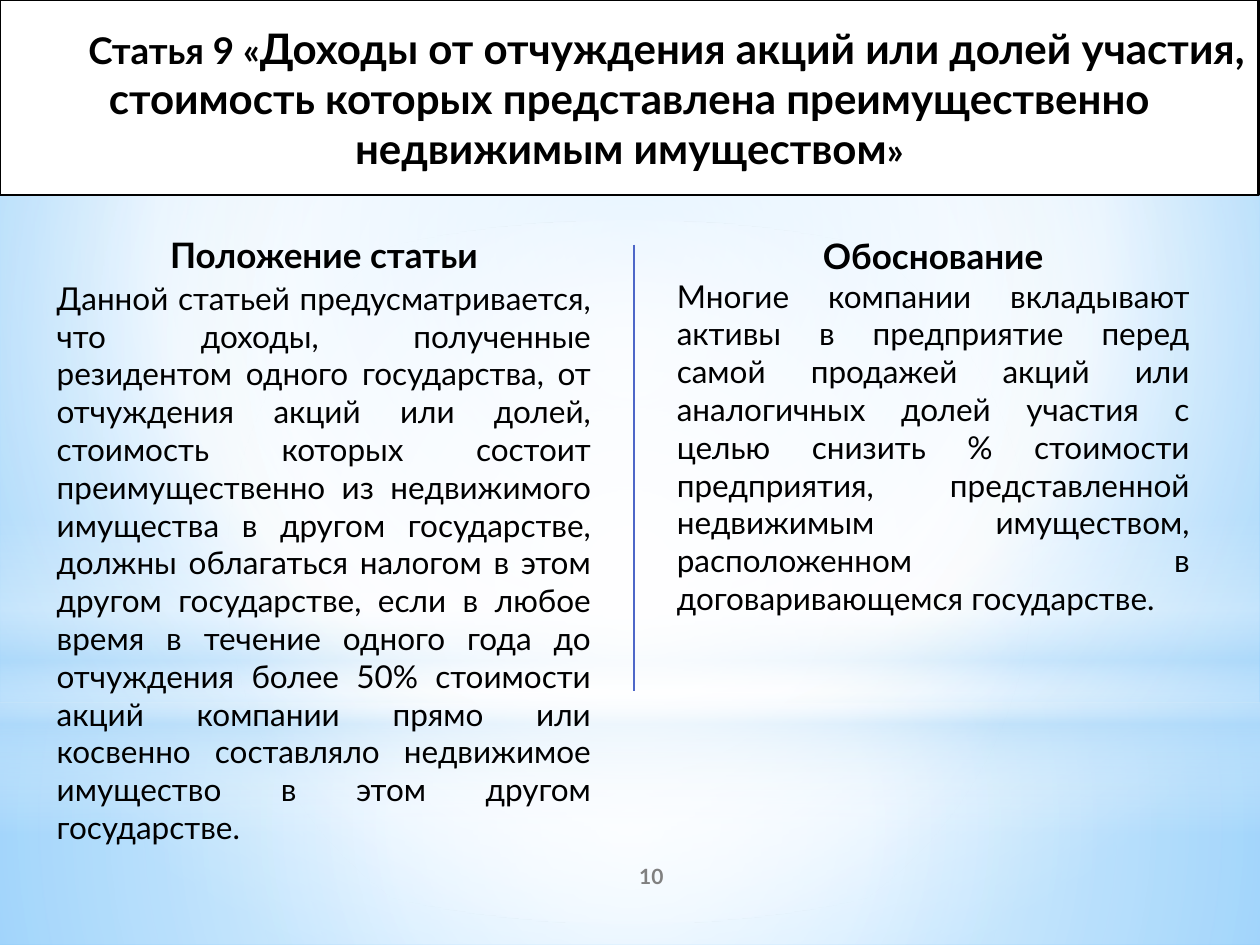
from lxml import etree
from pptx import Presentation
from pptx import util as u
from pptx.dml.color import RGBColor
from pptx.enum import shapes, text
from pptx.oxml.ns import qn

BLACK = RGBColor(0x00, 0x00, 0x00)
WHITE = RGBColor(0xFF, 0xFF, 0xFF)
GREY = RGBColor(0x80, 0x80, 0x80)
SKY = RGBColor(0xB4, 0xDC, 0xFA)
LIGHT_BLUE = RGBColor(0x9E, 0xD5, 0xFF)
BRIGHT_BLUE = RGBColor(0x5B, 0xB9, 0xFF)
INDIGO = RGBColor(0x4E, 0x67, 0xC8)
FONT = "Lato"
CENTER = (50, 50, 50, 50)


def paint_gradient(fill, element, stops, focus=None):
    """Stops are (position %, colour, opacity %); without a focus it runs downwards."""
    fill.gradient()
    gradient = element.find(".//" + qn("a:gradFill"))
    for child in list(gradient):
        gradient.remove(child)
    stop_list = etree.SubElement(gradient, qn("a:gsLst"))
    for position, color, opacity in stops:
        stop = etree.SubElement(stop_list, qn("a:gs"), pos=str(position * 1000))
        rgb = etree.SubElement(stop, qn("a:srgbClr"), val=str(color))
        if opacity < 100:
            etree.SubElement(rgb, qn("a:alpha"), val=str(opacity * 1000))
    if focus:
        circle = etree.SubElement(gradient, qn("a:path"), path="circle")
        sides = {side: str(value * 1000) for side, value in zip("ltrb", focus)}
        etree.SubElement(circle, qn("a:fillToRect"), **sides)
    else:
        etree.SubElement(gradient, qn("a:lin"), ang="5400000", scaled="0")


def place(shape, left, top, width, height):
    """Position in centimetres."""
    shape.left, shape.top = u.Cm(left), u.Cm(top)
    shape.width, shape.height = u.Cm(width), u.Cm(height)


presentation = Presentation()
presentation.slide_width, presentation.slide_height = u.Cm(25.4), u.Cm(19.05)
slide = presentation.slides.add_slide(presentation.slide_layouts.get_by_name("Two Content"))

# Background with four soft layers of light
paint_gradient(
    slide.background.fill, slide.element,
    [(0, LIGHT_BLUE, 100), (60, WHITE, 100), (100, BRIGHT_BLUE, 100)], (20, 10, 20, 60),
)
RECTANGLE, OVAL = shapes.MSO_SHAPE.RECTANGLE, shapes.MSO_SHAPE.OVAL
layers = [
    (RECTANGLE, 14.17, 4.88, [(0, WHITE, 91), (37, WHITE, 76), (100, SKY, 79)], CENTER),
    (RECTANGLE, 0, 14.17, [(0, WHITE, 89), (48, WHITE, 62), (100, SKY, 79)], CENTER),
    (RECTANGLE, 10.46, 6.35, [(0, WHITE, 0), (29, WHITE, 30), (45, SKY, 40),
                              (55, WHITE, 26), (65, SKY, 60), (100, WHITE, 0)], None),
    (OVAL, 4.45, 14.17, [(0, WHITE, 100), (56, WHITE, 0)], CENTER),
]
title = slide.shapes.title
for kind, top, height, stops, focus in layers:
    layer = slide.shapes.add_shape(kind, 0, u.Cm(top), presentation.slide_width, u.Cm(height))
    layer.shadow.inherit = False
    layer.line.fill.background()
    paint_gradient(layer.fill, layer.element, stops, focus)
    title.element.addprevious(layer.element)

# Title
place(title, 0, 0, 25.37, 3.94)
title.fill.solid()
title.fill.fore_color.rgb = WHITE
title.line.color.rgb = BLACK
title.line.width = u.Pt(1.25)
frame = title.text_frame
frame.word_wrap = True
frame.auto_size = text.MSO_AUTO_SIZE.NONE
frame.vertical_anchor = text.MSO_ANCHOR.MIDDLE
paragraph = frame.paragraphs[0]
paragraph.alignment = text.PP_ALIGN.CENTER
paragraph._p.get_or_add_pPr().set("indent", str(u.Cm(1.5)))
for words, size in [
    ("Статья 9 «", 21),
    ("Доходы от отчуждения акций или долей участия, стоимость которых представлена "
     "преимущественно недвижимым имуществом", 24),
    ("»", 21),
]:
    run = paragraph.add_run()
    run.text = words
    run.font.name, run.font.size, run.font.bold = FONT, u.Pt(size), True
    run.font.color.rgb = BLACK

# Two columns
columns = [
    (1, (0.89, 4.6, 11.28, 12.55), text.MSO_ANCHOR.MIDDLE, 2, "Положение статьи",
     "Данной статьей предусматривается, что доходы, полученные резидентом одного "
     "государства, от отчуждения акций или долей, стоимость которых состоит "
     "преимущественно из недвижимого имущества в другом государстве, должны облагаться "
     "налогом в этом другом государстве, если в любое время в течение одного года до "
     "отчуждения более 50% стоимости акций компании прямо или косвенно составляло "
     "недвижимое имущество в этом другом государстве."),
    (2, (13.39, 4.6, 10.85, 8.03), text.MSO_ANCHOR.TOP, 0, "Обоснование",
     "Многие компании вкладывают активы в предприятие перед самой продажей акций или "
     "аналогичных долей участия с целью снизить % стоимости предприятия, представленной "
     "недвижимым имуществом, расположенном в договаривающемся государстве."),
]
for index, box, anchor, space, heading, body in columns:
    column = slide.placeholders[index]
    place(column, *box)
    frame = column.text_frame
    frame.word_wrap = True
    frame.auto_size = text.MSO_AUTO_SIZE.NONE
    frame.vertical_anchor = anchor
    frame.text = heading
    frame.add_paragraph().text = body
    styles = [(text.PP_ALIGN.CENTER, 20, True), (text.PP_ALIGN.JUSTIFY, 18, False)]
    for paragraph, (alignment, size, bold) in zip(frame.paragraphs, styles):
        paragraph.alignment = alignment
        paragraph.space_before = u.Pt(space)
        font = paragraph.font
        font.name, font.size, font.bold = FONT, u.Pt(size), bold
        font.color.rgb = BLACK
        properties = paragraph._p.get_or_add_pPr()
        properties.set("marL", "0")
        properties.set("indent", "0")
        bullet = etree.Element(qn("a:buNone"))
        properties.find(qn("a:defRPr")).addprevious(bullet)

# Divider between the columns
divider = slide.shapes.add_connector(
    shapes.MSO_CONNECTOR.STRAIGHT, u.Cm(12.78), u.Cm(4.93), u.Cm(12.78), u.Cm(13.92)
)
divider.line.color.rgb = INDIGO
divider.line.width = u.Pt(0.75)
etree.SubElement(divider.element.spPr, qn("a:effectLst"))

# Page number
number = slide.shapes.add_textbox(u.Cm(10.59), u.Cm(17.15), u.Cm(5.08), u.Cm(1.02))
number.text_frame.word_wrap = True
number.text_frame.vertical_anchor = text.MSO_ANCHOR.MIDDLE
number.text_frame.text = "10"
paragraph = number.text_frame.paragraphs[0]
paragraph.alignment = text.PP_ALIGN.CENTER
font = paragraph.font
font.name, font.size, font.bold = FONT, u.Pt(12), True
font.color.rgb = GREY

presentation.save("out.pptx")
